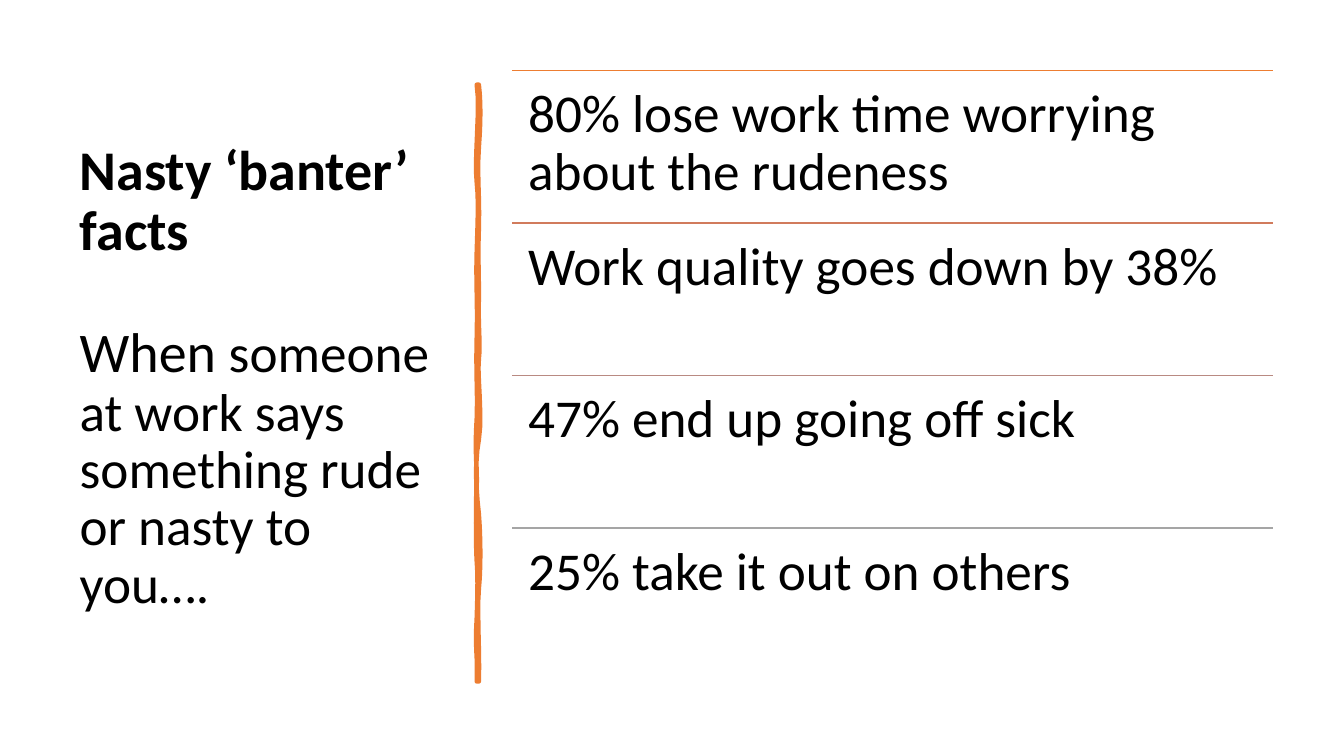
import pptx
import pptx.util
import pptx.dml.color
import pptx.enum.shapes
import pptx.enum.text
import pptx.oxml.ns
import lxml.etree

Inches, Pt = pptx.util.Inches, pptx.util.Pt
RGB = pptx.dml.color.RGBColor.from_string
COLORS = {"text": "000000", "brush": "ED7D31"}
FACTS = [
    ("80% lose work time worrying about the rudeness", "ED7D31"),
    ("Work quality goes down by 38%", "D17B5C"),
    ("47% end up going off sick", "B98A82"),
    ("25% take it out on others", "A5A5A5"),
]
LEFT, TOP, WIDTH, ROW = 5.08, 0.7, 7.55, 1.513

# Brush stroke: a start point, then three control points for each curve
BRUSH = [
    (4.75, 0.84),
    (4.77, 1.02), (4.77, 1.19), (4.75, 1.46),
    (4.73, 1.73), (4.76, 1.95), (4.75, 2.26),
    (4.74, 2.57), (4.75, 2.62), (4.75, 2.94),
    (4.74, 3.25), (4.77, 3.42), (4.75, 3.56),
    (4.73, 3.7), (4.79, 4.14), (4.75, 4.36),
    (4.71, 4.57), (4.72, 4.84), (4.75, 5.1),
    (4.77, 5.36), (4.77, 5.64), (4.75, 5.84),
    (4.73, 6.03), (4.76, 6.5), (4.75, 6.76),
    (4.74, 6.76), (4.73, 6.76), (4.73, 6.76),
    (4.74, 6.46), (4.71, 6.44), (4.73, 6.13),
    (4.74, 5.83), (4.74, 5.7), (4.73, 5.57),
    (4.72, 5.44), (4.72, 4.95), (4.73, 4.77),
    (4.73, 4.59), (4.71, 4.45), (4.73, 4.15),
    (4.74, 3.86), (4.72, 3.73), (4.73, 3.35),
    (4.74, 2.98), (4.72, 2.81), (4.73, 2.5),
    (4.74, 2.18), (4.75, 2), (4.73, 1.81),
    (4.7, 1.63), (4.77, 1.04), (4.73, 0.84),
]
STEPS = 6


def add_run(p, text, size, bold=False):
    r = p.add_run()
    r.text = text
    for name, value in {"name": "Calibri", "size": Pt(size), "bold": bold}.items():
        setattr(r.font, name, value)
    r.font.color.rgb = RGB(COLORS["text"])


prs = pptx.Presentation()
prs.slide_width, prs.slide_height = Inches(13.333), Inches(7.5)
s = prs.slides.add_slide(prs.slide_layouts[5])

# Title
sp = s.shapes.title
sp.left, sp.top, sp.width, sp.height = map(Inches, (0.69, 0.7, 3.74, 6.11))
tf = sp.text_frame
tf.word_wrap = True
tf.auto_size = pptx.enum.text.MSO_AUTO_SIZE.NONE
tf.vertical_anchor = pptx.enum.text.MSO_ANCHOR.MIDDLE
heading, intro = tf.paragraphs[0], tf.add_paragraph()
for p in (heading, intro):
    p.alignment = pptx.enum.text.PP_ALIGN.LEFT
    p.line_spacing = 0.9
intro.space_before = Pt(44)
add_run(heading, "Nasty ‘banter’ facts", 40, bold=True)
add_run(intro, "When ", 40)
add_run(intro, "someone at work says something rude or nasty to you….", 38)

# Brush stroke
points = []
for i in range(0, len(BRUSH) - 1, 3):
    curve = BRUSH[i:i + 4]
    for step in range(1, STEPS + 1):
        t = step / STEPS
        weights = ((1 - t) ** 3, 3 * t * (1 - t) ** 2, 3 * t ** 2 * (1 - t), t ** 3)
        points.append(tuple(
            Inches(sum(w * c[axis] for w, c in zip(weights, curve))) for axis in (0, 1)))
builder = s.shapes.build_freeform(*map(Inches, BRUSH[0]))
builder.add_line_segments(points, close=True)
sp = builder.convert_to_shape()
sp.shadow.inherit = False
sp.fill.solid()
sp.fill.fore_color.rgb = RGB(COLORS["brush"])
sp.line.color.rgb = RGB(COLORS["brush"])
sp.line.width = Pt(3.25)

# Facts, each under its own rule
for i, (fact, color) in enumerate(FACTS):
    y = Inches(TOP + i * ROW)
    rule = s.shapes.add_connector(
        pptx.enum.shapes.MSO_CONNECTOR.STRAIGHT, Inches(LEFT), y, Inches(LEFT + WIDTH), y)
    rule.line.color.rgb = RGB(color)
    rule.line.width = Pt(1)
    lxml.etree.SubElement(rule._element.spPr, pptx.oxml.ns.qn("a:effectLst"))

    tf = s.shapes.add_textbox(Inches(LEFT), y, Inches(WIDTH), Inches(ROW)).text_frame
    tf.word_wrap = True
    for side in ("left", "top", "right", "bottom"):
        setattr(tf, f"margin_{side}", Inches(0.16))
    p = tf.paragraphs[0]
    p.line_spacing = 0.9
    add_run(p, fact, 38)

prs.save("out.pptx")
